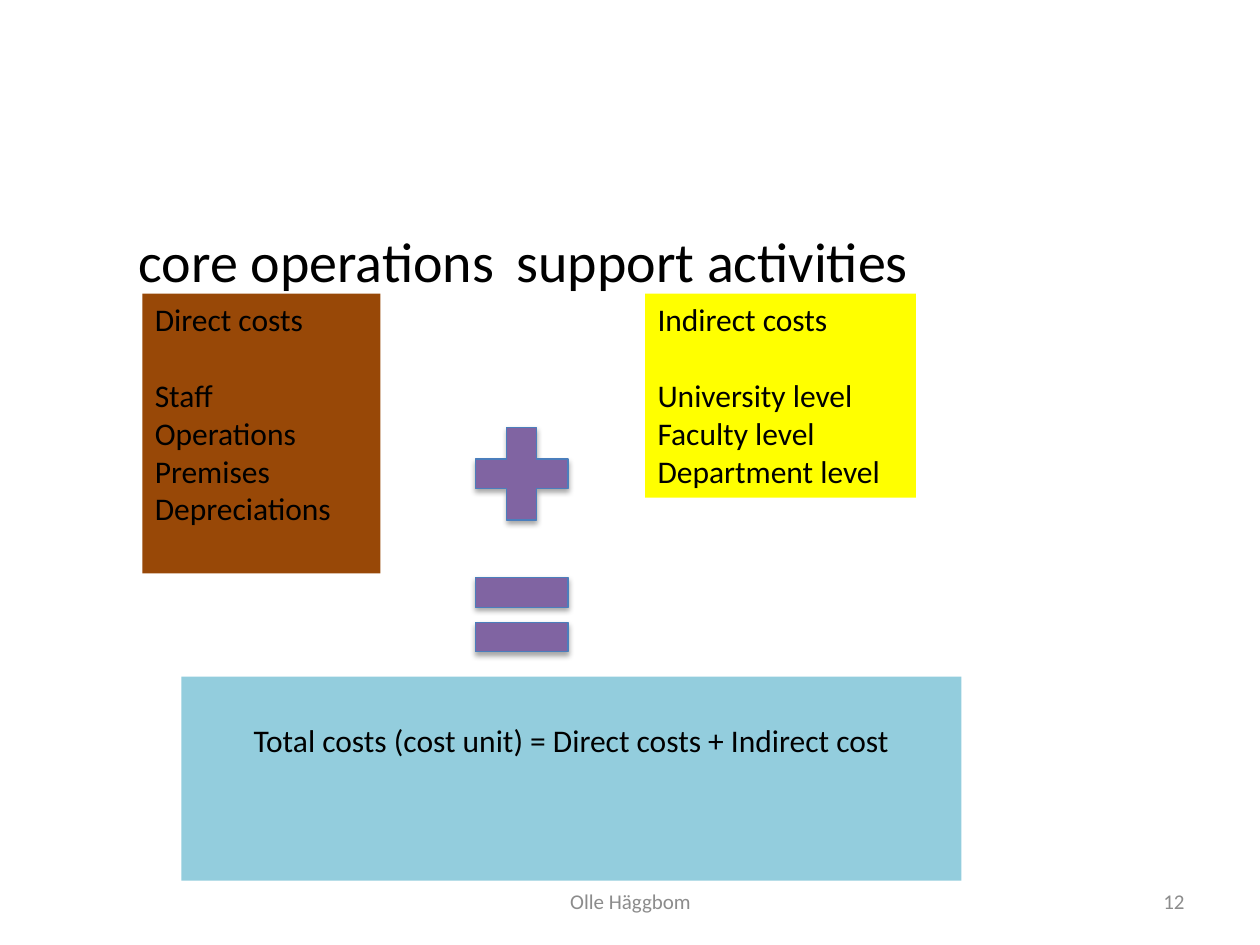
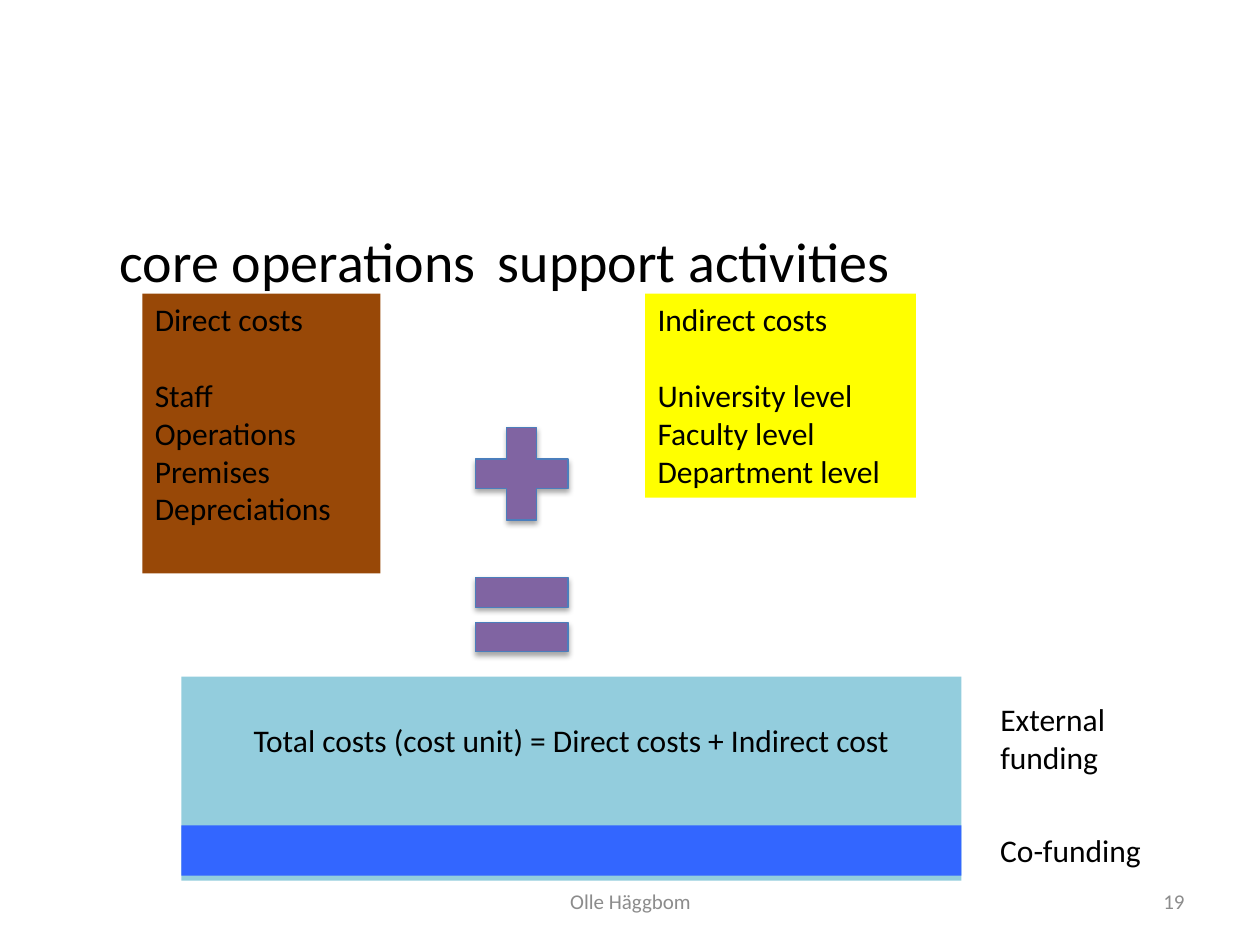
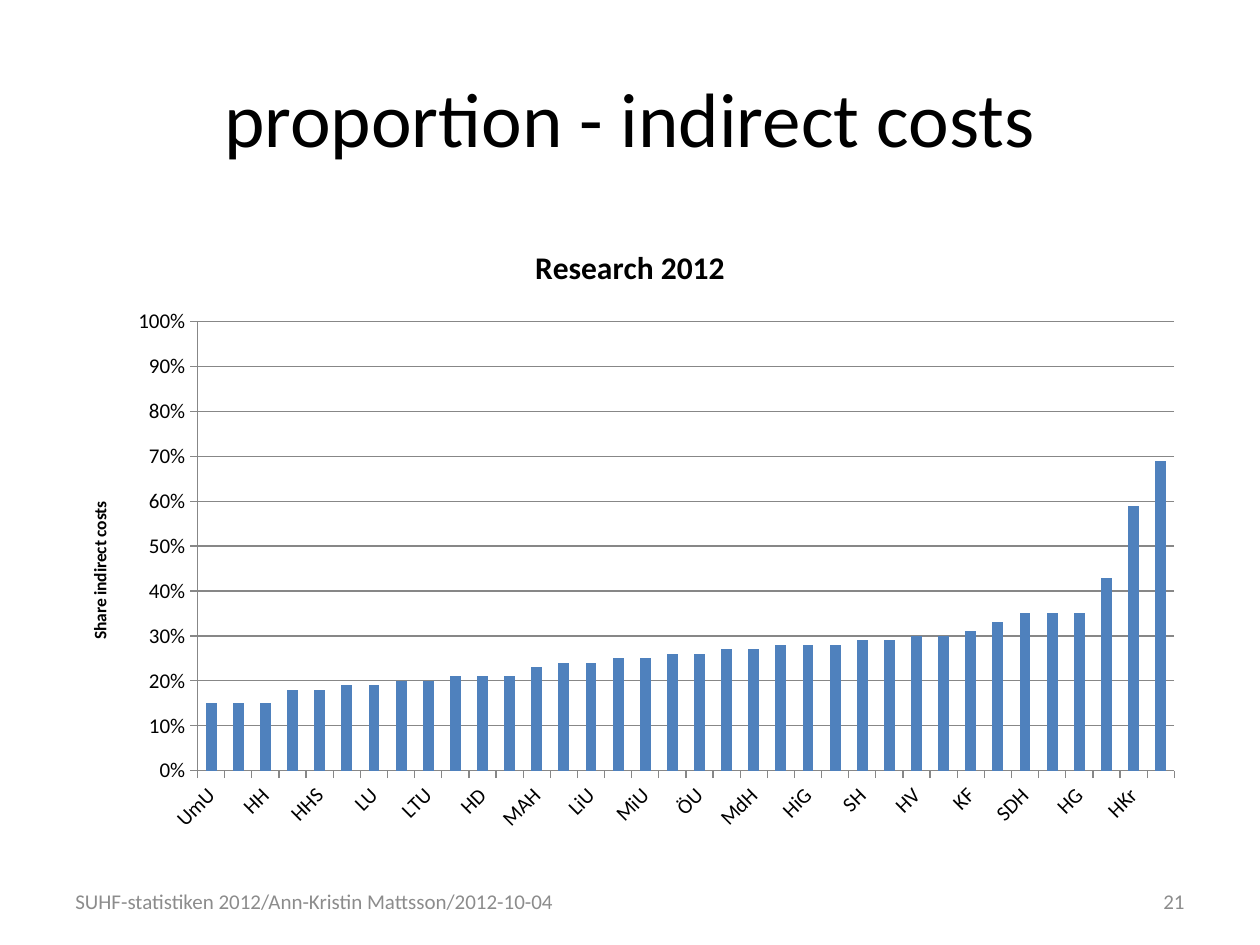
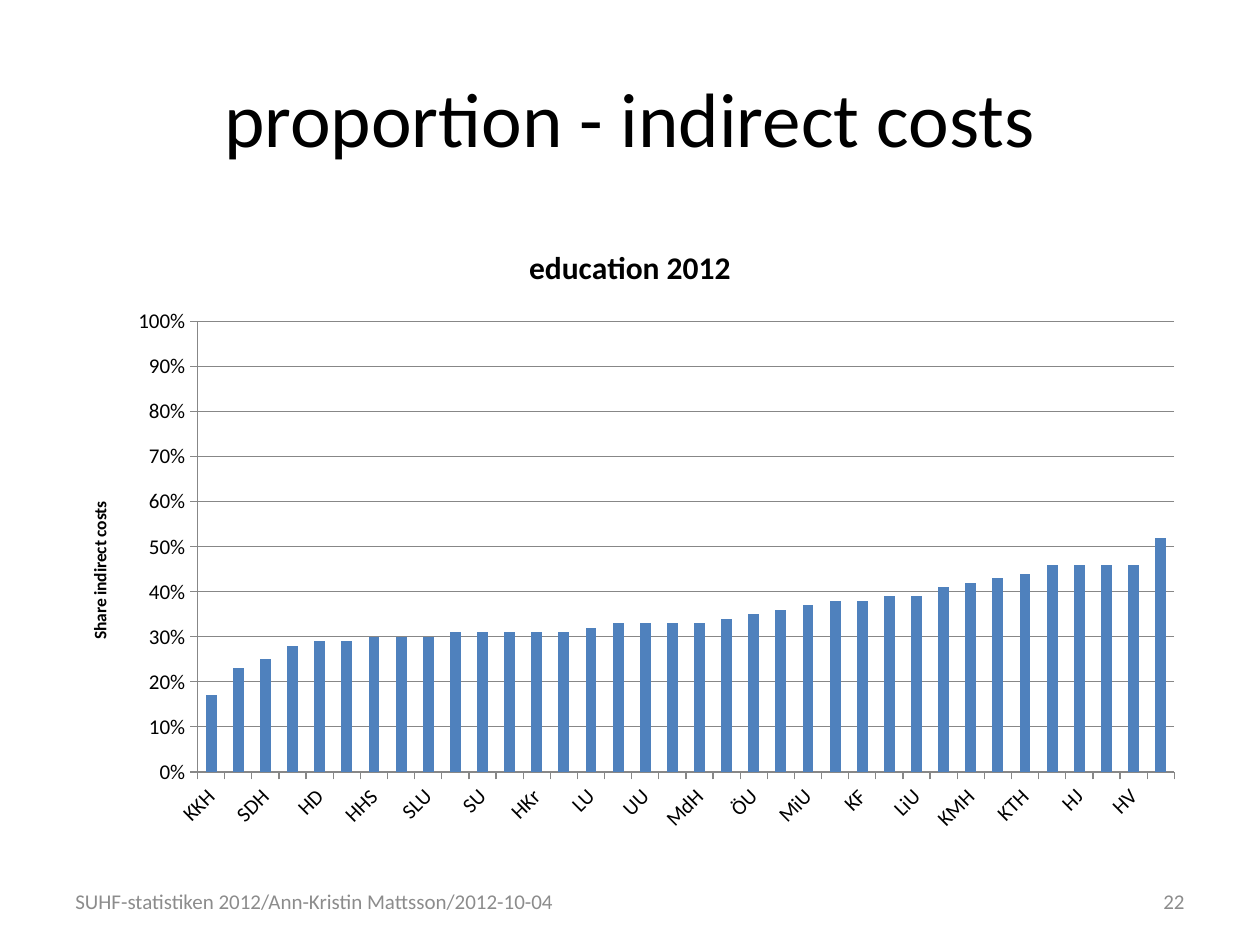
from pptx import Presentation
from pptx.chart.data import CategoryChartData
from pptx.dml.color import RGBColor
from pptx.enum.chart import XL_CHART_TYPE, XL_TICK_MARK
from pptx.enum.shapes import MSO_SHAPE
from pptx.enum.text import MSO_ANCHOR, PP_ALIGN
from pptx.oxml import parse_xml
from pptx.oxml.ns import nsdecls
from pptx.util import Inches, Pt

FONT = "Calibri"
BLACK, GREY, AXIS_GREY = "000000", "8C8C8C", "878787"
BROWN, YELLOW, AQUA, BLUE = "984807", "FFFF00", "93CDDD", "3366FF"
PURPLE, OUTLINE, BAR = "8064A2", "4B7EBC", "4F81BD"

TITLE_AND_CONTENT, TITLE_ONLY = 1, 5
TITLE_BOX = (0.5, 0.3, 9, 1.25)
CONTENT_BOX = (0.5, 1.75, 9, 4.95)
LINE_GAP = Pt(22)  # one empty line of 18 pt text

AUTHOR = "Olle Häggbom"
SOURCE = "SUHF-statistiken 2012/Ann-Kristin Mattsson/2012-10-04"

RESEARCH = (
    "UmU KI HH CTH HHS UU LU HS LTU GU HD SLU MAH KTH LiU LNU MiU SU "
    "ÖU BTH MdH HB HiG OH SH KaU HV HJ KF DCH SDH KMH HG GIH HKr KKH",
    (0.15, 0.15, 0.15, 0.18, 0.18, 0.19, 0.19, 0.2, 0.2, 0.21, 0.21, 0.21,
     0.23, 0.24, 0.24, 0.25, 0.25, 0.26, 0.26, 0.27, 0.27, 0.28, 0.28, 0.28,
     0.29, 0.29, 0.3, 0.3, 0.31, 0.33, 0.35, 0.35, 0.35, 0.43, 0.59, 0.69),
)
EDUCATION = (
    "KKH KI SDH LTU HD HG HHS UmU SLU OH SU SH HKr CTH LU KaU UU GU "
    "MdH HB ÖU HS MiU LNU KF HiG LiU BTH KMH HH KTH DCH HJ MAH HV GIH",
    (0.17, 0.23, 0.25, 0.28, 0.29, 0.29, 0.3, 0.3, 0.3, 0.31, 0.31, 0.31,
     0.31, 0.31, 0.32, 0.33, 0.33, 0.33, 0.33, 0.34, 0.35, 0.36, 0.37, 0.38,
     0.38, 0.39, 0.39, 0.41, 0.42, 0.43, 0.44, 0.46, 0.46, 0.46, 0.46, 0.52),
)


def rgb(color):
    return RGBColor.from_string(color)


def inches(box):
    return [Inches(v) for v in box]


def place(shape, box):
    shape.left, shape.top, shape.width, shape.height = inches(box)


def style_font(font, size, color=BLACK, bold=None):
    font.name, font.size, font.bold = FONT, Pt(size), bold
    font.color.rgb = rgb(color)


def write(shape, text, size=18, color=BLACK, align=PP_ALIGN.LEFT,
          anchor=MSO_ANCHOR.TOP):
    tf = shape.text_frame
    tf.word_wrap = True
    tf.vertical_anchor = anchor
    tf.text = text
    for p in tf.paragraphs:
        p.alignment = align
        for r in p.runs:
            style_font(r.font, size, color)
    return tf


def add_text(slide, box, text, **style):
    return write(slide.shapes.add_textbox(*inches(box)), text, **style)


def add_block(slide, box, fill):
    sp = slide.shapes.add_shape(MSO_SHAPE.RECTANGLE, *inches(box))
    sp.shadow.inherit = False
    sp.fill.solid()
    sp.fill.fore_color.rgb = rgb(fill)
    sp.line.fill.background()
    return sp


def add_footer(slide, box, text, number):
    """Write the footer in its box and the page number at the right."""
    align = PP_ALIGN.CENTER if text == AUTHOR else PP_ALIGN.LEFT
    style = dict(size=12, color=GREY, anchor=MSO_ANCHOR.MIDDLE)
    add_text(slide, box, text, align=align, **style)
    add_text(slide, (7.17, 6.95, 2.33, 0.4), str(number),
             align=PP_ALIGN.RIGHT, **style)


def add_headings(slide, left):
    """Put both column headings on one line of the body placeholder."""
    slide.shapes.title.element.getparent().remove(slide.shapes.title.element)
    body = slide.placeholders[1]
    place(body, (left, *CONTENT_BOX[1:]))
    body.text_frame.text = "\tcore operations\tsupport activities"
    p = body.text_frame.paragraphs[0]
    pPr = p._p.get_or_add_pPr()
    pPr.set("marL", "0")
    pPr.set("indent", "0")
    pPr.append(parse_xml(f"<a:buNone {nsdecls('a')}/>"))
    stops = "".join(f'<a:tab pos="{Inches(pos)}" algn="l"/>' for pos in (0.6, 4.5))
    pPr.append(parse_xml(f"<a:tabLst {nsdecls('a')}>{stops}</a:tabLst>"))
    for r in p.runs:
        style_font(r.font, 32)


def add_cost_list(slide, box, fill, heading, items):
    tf = write(add_block(slide, box, fill), "\n".join([heading, *items]))
    tf.paragraphs[1].space_before = LINE_GAP


def add_operator(slide, kind, top):
    """Add a math sign, which keeps the shadow of the theme."""
    sp = slide.shapes.add_shape(kind, *inches((3.64, top, 1, 1)))
    sp.fill.solid()
    sp.fill.fore_color.rgb = rgb(PURPLE)
    sp.line.color.rgb = rgb(OUTLINE)
    sp.line.width = Pt(0.75)


def add_total(slide, box):
    tf = write(add_block(slide, box, AQUA),
               "Total costs (cost unit) = Direct costs + Indirect cost",
               align=PP_ALIGN.CENTER)
    tf.margin_top = Inches(0.35)


def add_funding(slide, total_box):
    """Mark the co-funded part of the total and label both parts."""
    left, top, width, _ = total_box
    label_left = left + width + 0.21
    add_block(slide, (left, top + 1.18, width, 0.4), BLUE)
    add_text(slide, (label_left, top + 0.14, 1.51, 0.71), "External\nfunding")
    add_text(slide, (label_left, top + 1.18, 1.34, 0.4), "Co-funding")


def cost_slide(prs, number, headings_left, funding=False):
    slide = prs.slides.add_slide(prs.slide_layouts[TITLE_AND_CONTENT])
    total_box = (1.44, 5.37, 6.19, 1.62)
    add_headings(slide, headings_left)
    add_footer(slide, (3.42, 6.95, 3.17, 0.4), AUTHOR, number)
    add_cost_list(slide, (1.13, 2.33, 1.89, 2.22), BROWN, "Direct costs",
                  ["Staff", "Operations", "Premises", "Depreciations"])
    add_cost_list(slide, (5.12, 2.33, 2.15, 1.62), YELLOW, "Indirect costs",
                  ["University level", "Faculty level", "Department level"])
    add_total(slide, total_box)
    add_operator(slide, MSO_SHAPE.MATH_PLUS, 3.26)
    add_operator(slide, MSO_SHAPE.MATH_EQUAL, 4.38)
    if funding:
        add_funding(slide, total_box)


def title_text(tf, text, size):
    tf.text = text
    style_font(tf.paragraphs[0].runs[0].font, size, bold=True)


def style_axis(axis):
    axis.major_tick_mark = XL_TICK_MARK.OUTSIDE
    axis.minor_tick_mark = XL_TICK_MARK.NONE
    axis.format.line.color.rgb = rgb(AXIS_GREY)
    style_font(axis.tick_labels.font, 12)


def add_share_chart(slide, box, title, categories, values):
    data = CategoryChartData(number_format="0%")
    data.categories = categories.split()
    data.add_series("Series 1", values)
    chart = slide.shapes.add_chart(
        XL_CHART_TYPE.COLUMN_CLUSTERED, *inches(box), data).chart
    style_font(chart.font, 10)
    chart.has_legend = False
    title_text(chart.chart_title.text_frame, title, 18)

    plot = chart.plots[0]
    plot.gap_width = 150
    plot.vary_by_categories = False
    fill = plot.series[0].format.fill
    fill.solid()
    fill.fore_color.rgb = rgb(BAR)

    style_axis(chart.category_axis)
    chart.category_axis._element.txPr.bodyPr.set("rot", "-2700000")

    shares = chart.value_axis
    style_axis(shares)
    shares.minimum_scale, shares.maximum_scale, shares.major_unit = 0, 1, 0.1
    shares.tick_labels.number_format = "0%"
    shares.tick_labels.number_format_is_linked = False
    shares.major_gridlines.format.line.color.rgb = rgb(AXIS_GREY)
    tf = shares.axis_title.text_frame
    title_text(tf, "Share indirect costs", 10)
    tf._txBody.bodyPr.set("rot", "-5400000")
    tf._txBody.bodyPr.set("vert", "horz")


def chart_slide(prs, number, chart_title, shares, footer_width):
    slide = prs.slides.add_slide(prs.slide_layouts[TITLE_ONLY])
    place(slide.shapes.title, TITLE_BOX)
    write(slide.shapes.title, "proportion - indirect costs", size=44,
          align=PP_ALIGN.CENTER, anchor=MSO_ANCHOR.MIDDLE)
    add_footer(slide, (0.5, 6.95, footer_width, 0.4), SOURCE, number)
    add_share_chart(slide, CONTENT_BOX, chart_title, *shares)


def main():
    prs = Presentation()
    prs.slide_width, prs.slide_height = Inches(10), Inches(7.5)
    cost_slide(prs, 12, headings_left=0.5)
    cost_slide(prs, 19, headings_left=0.35, funding=True)
    chart_slide(prs, 21, "Research 2012", RESEARCH, footer_width=4.97)
    chart_slide(prs, 22, "education 2012", EDUCATION, footer_width=4.03)
    prs.save("out.pptx")


if __name__ == "__main__":
    main()
